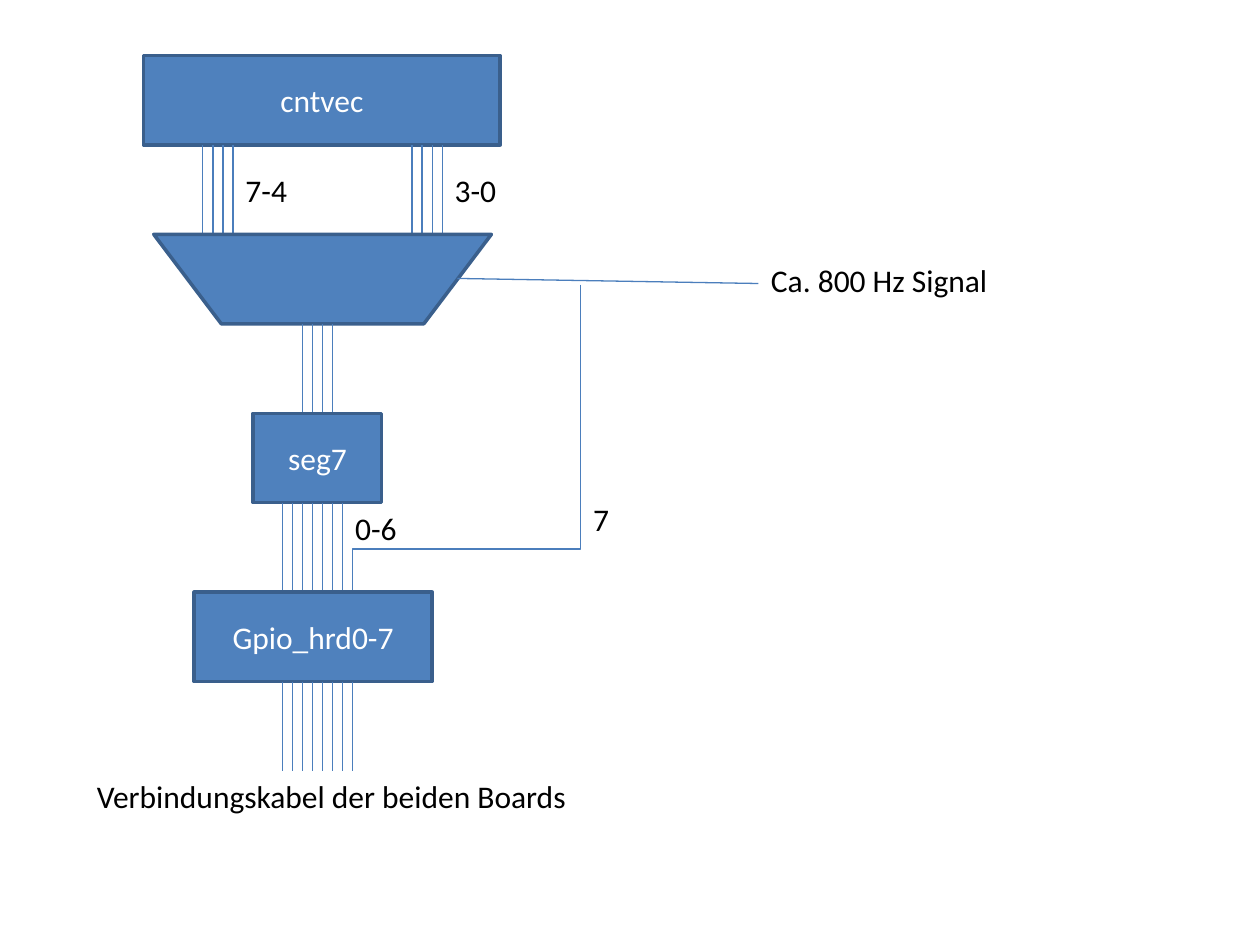
from lxml import etree
from pptx import Presentation
from pptx.dml.color import RGBColor
from pptx.enum.shapes import MSO_CONNECTOR, MSO_SHAPE
from pptx.enum.text import MSO_ANCHOR, MSO_AUTO_SIZE, PP_ALIGN
from pptx.oxml.ns import qn
from pptx.util import Inches, Pt

BLUE, EDGE, WIRE = "4F81BD", "3A5F8C", "4B7EBC"
WHITE, BLACK = "FFFFFF", "000000"
STEP = 0.71   # height of every block and every bus
PITCH = 0.08  # gap between the wires of a bus


def color(code):
    return RGBColor.from_string(code)


def write(frame, text, size=18, fill=BLACK, align=PP_ALIGN.LEFT,
          anchor=MSO_ANCHOR.TOP):
    frame.vertical_anchor = anchor
    para = frame.paragraphs[0]
    para.alignment = align
    run = para.add_run()
    run.text = text
    run.font.name = "Calibri"
    run.font.size = Pt(size)
    run.font.color.rgb = color(fill)


def label(slide, x, y, width, text):
    box = slide.shapes.add_textbox(
        Inches(x), Inches(y), Inches(width), Inches(0.4))
    box.text_frame.word_wrap = False
    box.text_frame.auto_size = MSO_AUTO_SIZE.SHAPE_TO_FIT_TEXT
    write(box.text_frame, text)


def block(slide, x, y, width, text="", kind=MSO_SHAPE.RECTANGLE):
    shape = slide.shapes.add_shape(
        kind, Inches(x), Inches(y), Inches(width), Inches(STEP))
    shape.shadow.inherit = False
    shape.fill.solid()
    shape.fill.fore_color.rgb = color(BLUE)
    shape.line.color.rgb = color(EDGE)
    shape.line.width = Pt(2)
    if text:
        write(shape.text_frame, text, fill=WHITE, align=PP_ALIGN.CENTER,
              anchor=MSO_ANCHOR.MIDDLE)


def wire(slide, x1, y1, x2, y2, kind=MSO_CONNECTOR.STRAIGHT):
    line = slide.shapes.add_connector(
        kind, Inches(x1), Inches(y1), Inches(x2), Inches(y2))
    line.line.color.rgb = color(WIRE)
    line.line.width = Pt(0.75)
    etree.SubElement(line._element.spPr, qn("a:effectLst"))
    return line


def bus(slide, x, y, count):
    for i in range(count):
        wire(slide, x + i * PITCH, y, x + i * PITCH, y + STEP)


def drop(slide, x, y, width, height, bend):
    """Elbow from the top right of the box down to its bottom left."""
    # A quarter turn swaps the sides of the box around its centre
    left, top = x + (width - height) / 2, y + (height - width) / 2
    line = wire(slide, left, top, left + height, top + width,
                MSO_CONNECTOR.ELBOW)
    props = line._element.spPr
    props.find(qn("a:xfrm")).set("rot", str(90 * 60000))
    guides = props.find(qn("a:prstGeom")).find(qn("a:avLst"))
    etree.SubElement(guides, qn("a:gd"), name="adj1",
                     fmla=f"val {round(bend * 100000)}")


def counter(slide, x, y):
    """Counter block with its two half-byte buses."""
    block(slide, x, y, 2.83, "cntvec")
    for shift, text in ((0.47, "7-4"), (2.13, "3-0")):
        bus(slide, x + shift, y + STEP, 4)
        label(slide, x + shift + 0.24, y + 0.87, 0.54, text)


def switch(slide, x, y):
    """Multiplexer with its select signal and output bus."""
    block(slide, x, y, 2.68, kind=MSO_SHAPE.FLOWCHART_MANUAL_OPERATION)
    wire(slide, x + 2.41, y + 0.35, x + 4.8, y + 0.39)
    label(slide, x + 4.8, y + 0.16, 1.95, "Ca. 800 Hz Signal")
    bus(slide, x + 1.18, y + STEP, 4)


def decoder(slide, x, y):
    """Segment decoder with its seven outputs."""
    block(slide, x, y, 1.02, "seg7")
    bus(slide, x + 0.23, y + STEP, 7)
    label(slide, x + 0.71, y + STEP, 0.54, "0-6")


def port(slide, x, y):
    """Output port, its eighth input and the cable below."""
    drop(slide, x + 1.26, y - 2.44, 1.81, 2.44, 0.86)
    label(slide, x + 3.07, y - 0.78, 0.33, "7")
    block(slide, x, y, 1.89, "Gpio_hrd0-7")
    bus(slide, x + 0.7, y + STEP, 8)
    label(slide, x - 0.87, y + 2 * STEP, 3.97,
          "Verbindungskabel der beiden Boards")


def main():
    deck = Presentation()
    deck.slide_width, deck.slide_height = Inches(10), Inches(7.5)
    slide = deck.slides.add_slide(deck.slide_layouts[6])
    # The stages follow each other, one block and one bus apart
    stages = ((counter, 1.14), (switch, 1.22), (decoder, 2.01), (port, 1.54))
    for i, (stage, x) in enumerate(stages):
        stage(slide, x, 0.44 + i * 2 * STEP)
    deck.save("out.pptx")


if __name__ == "__main__":
    main()
